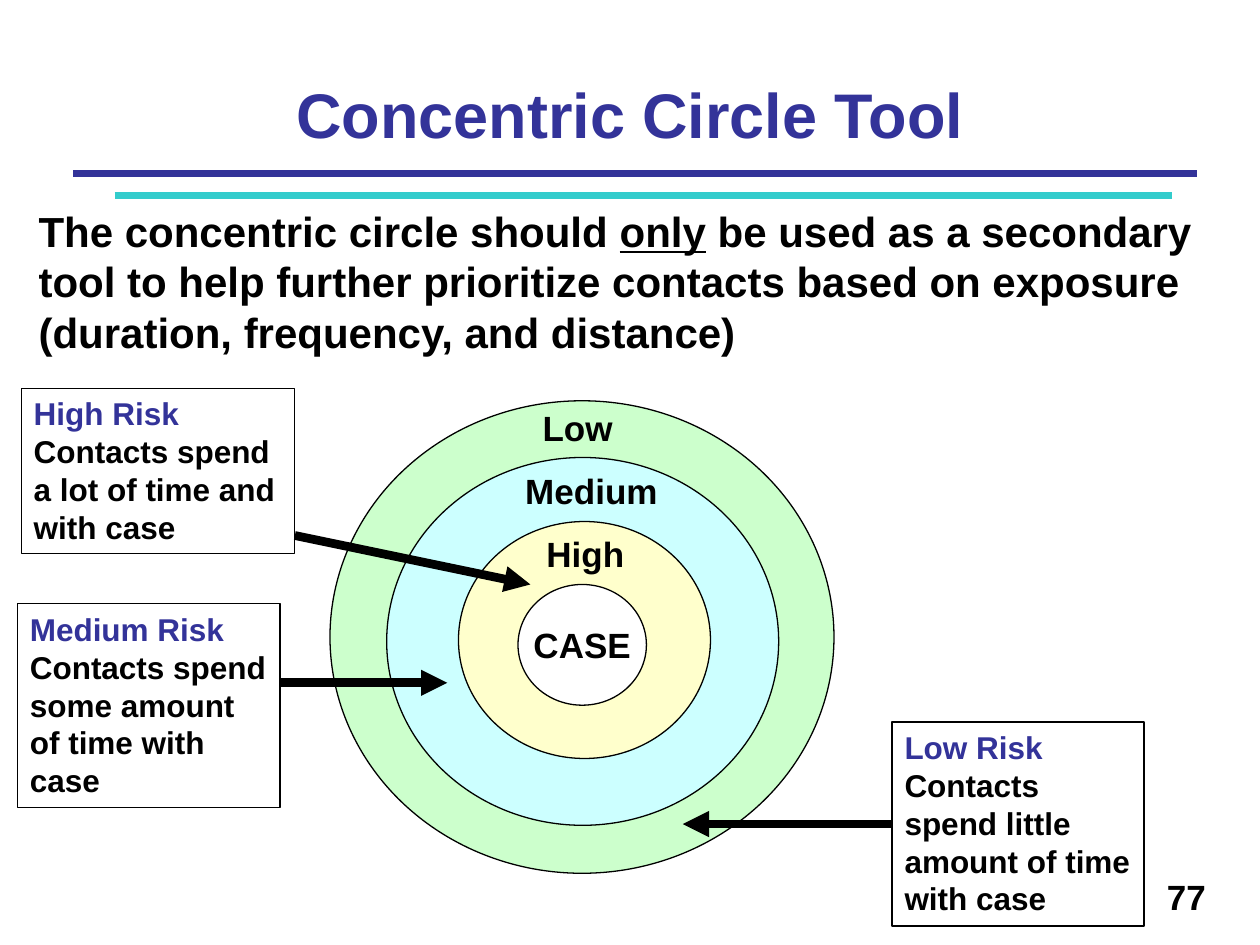
from typing import NamedTuple, Optional

from lxml.etree import SubElement
from pptx import Presentation
from pptx.dml.color import RGBColor
from pptx.enum.shapes import MSO_CONNECTOR, MSO_SHAPE
from pptx.enum.text import MSO_ANCHOR, MSO_AUTO_SIZE, PP_ALIGN
from pptx.oxml.ns import qn
from pptx.util import Pt

BLACK, NAVY, TEAL = "000000", "333399", "33CCCC"
LEFT_SITE = 1


class Box(NamedTuple):
    x: float
    y: float
    w: float
    h: float

    def lengths(self):
        return [Pt(v) for v in self]


class Ring(NamedTuple):
    box: Box
    fill: str


class Label(NamedTuple):
    text: str
    box: Box
    align: PP_ALIGN


class Note(NamedTuple):
    heading: str
    body: str
    box: Box
    start: tuple
    end: tuple
    site: Optional[int] = None


RINGS = [
    Ring(Box(188.6, 229, 288, 270), "CCFFCC"),
    Ring(Box(221, 261.4, 224, 210.2), "CCFFFF"),
    Ring(Box(262, 298, 144, 135.4), "FFFFCC"),
    Ring(Box(296, 334, 73.4, 69), "FFFFFF"),
]
LABELS = [
    Label("High", Box(286.6, 301, 95.8, 31), PP_ALIGN.CENTER),
    Label("Medium", Box(271.4, 265, 133.2, 31), PP_ALIGN.CENTER),
    Label("Low", Box(303, 229, 95.8, 31), PP_ALIGN.LEFT),
    Label("77", Box(468, 496.8, 228.2, 37.4), PP_ALIGN.RIGHT),
]
NOTES = [
    Note("Medium Risk", "Contacts spend some amount of time with case",
         Box(10, 345, 150, 116.6), (160.6, 390.2), (255.6, 390.2)),
    Note("High Risk", "Contacts spend a lot of time and with case",
         Box(12.2, 221.8, 156.2, 94.3), (168.5, 306), (303.1, 334)),
    Note("Low Risk", "Contacts spend little amount of time with case",
         Box(509.8, 412.6, 144, 116.6), (509.8, 470.9), (390.2, 470.9), LEFT_SITE),
]


def rgb(color: str) -> RGBColor:
    return RGBColor.from_string(color)


def style(p, size: float, color: str = BLACK, align=PP_ALIGN.LEFT) -> None:
    f = p.font
    f.name, f.size, f.bold = "Arial", Pt(size), True
    f.color.rgb = rgb(color)
    p.alignment = align


def add_text(s, box: Box, size: float, align=PP_ALIGN.LEFT, grow: bool = True):
    """Add a wrapping text box and return it with its first paragraph."""
    sp = s.shapes.add_textbox(*box.lengths())
    tf = sp.text_frame
    tf.word_wrap = True
    if grow:
        tf.auto_size = MSO_AUTO_SIZE.SHAPE_TO_FIT_TEXT
    p = tf.paragraphs[0]
    style(p, size, align=align)
    return sp, p


def add_line(s, start: tuple, end: tuple, color: str, width: float, arrow: bool = False):
    sp = s.shapes.add_connector(MSO_CONNECTOR.STRAIGHT, *[Pt(v) for v in start + end])
    sp.line.color.rgb = rgb(color)
    sp.line.width = Pt(width)
    if arrow:
        SubElement(sp.line._get_or_add_ln(), qn("a:tailEnd"), type="triangle")
    SubElement(sp._element.spPr, qn("a:effectLst"))
    return sp


def add_ring(s, ring: Ring):
    sp = s.shapes.add_shape(MSO_SHAPE.OVAL, *ring.box.lengths())
    sp.shadow.inherit = False
    sp.fill.solid()
    sp.fill.fore_color.rgb = rgb(ring.fill)
    sp.line.color.rgb = rgb(BLACK)
    sp.line.width = Pt(0.75)
    return sp


def add_note(s, note: Note) -> None:
    sp, p = add_text(s, note.box, 18)
    sp.line.color.rgb = rgb(BLACK)
    sp.line.width = Pt(0.75)
    r = p.add_run()
    r.text = note.heading
    r.font.color.rgb = rgb(NAVY)
    p.add_line_break()
    p.add_run().text = note.body
    arrow = add_line(s, note.start, note.end, BLACK, 5, arrow=True)
    if note.site is not None:
        arrow.begin_connect(sp, note.site)


def main() -> None:
    prs = Presentation()
    prs.slide_width, prs.slide_height = Pt(720), Pt(540)
    s = prs.slides.add_slide(prs.slide_layouts[5])

    # Title and the two rules below it
    title = s.shapes.title
    title.left, title.top, title.width, title.height = Box(36, 0, 648, 90).lengths()
    tf = title.text_frame
    tf.text = "Concentric Circle Tool"
    tf.vertical_anchor = MSO_ANCHOR.BOTTOM
    style(tf.paragraphs[0], 36, NAVY, PP_ALIGN.CENTER)
    add_line(s, (42, 99.4), (684, 99.4), NAVY, 4)
    add_line(s, (65.5, 111.6), (669.6, 111.6), TEAL, 4)

    # Introduction
    _, p = add_text(s, Box(15, 113.8, 696.2, 94.3), 24)
    p.add_run().text = "The concentric circle should "
    r = p.add_run()
    r.text = "only"
    r.font.underline = True
    p.add_run().text = (" be used as a secondary tool to help further prioritize contacts "
                        "based on exposure (duration, frequency, and distance)")

    # Rings, from the outside in, with the case at the centre
    case = [add_ring(s, ring) for ring in RINGS][-1]
    tf = case.text_frame
    tf.text = "CASE"
    tf.word_wrap = False
    tf.vertical_anchor = MSO_ANCHOR.MIDDLE
    style(tf.paragraphs[0], 20, align=PP_ALIGN.CENTER)

    # Ring labels and page number
    for label in LABELS:
        _, p = add_text(s, label.box, 20, label.align, grow=label.text != "77")
        p.add_run().text = label.text

    # Risk notes with their arrows
    for note in NOTES:
        add_note(s, note)

    prs.save("out.pptx")


if __name__ == "__main__":
    main()
